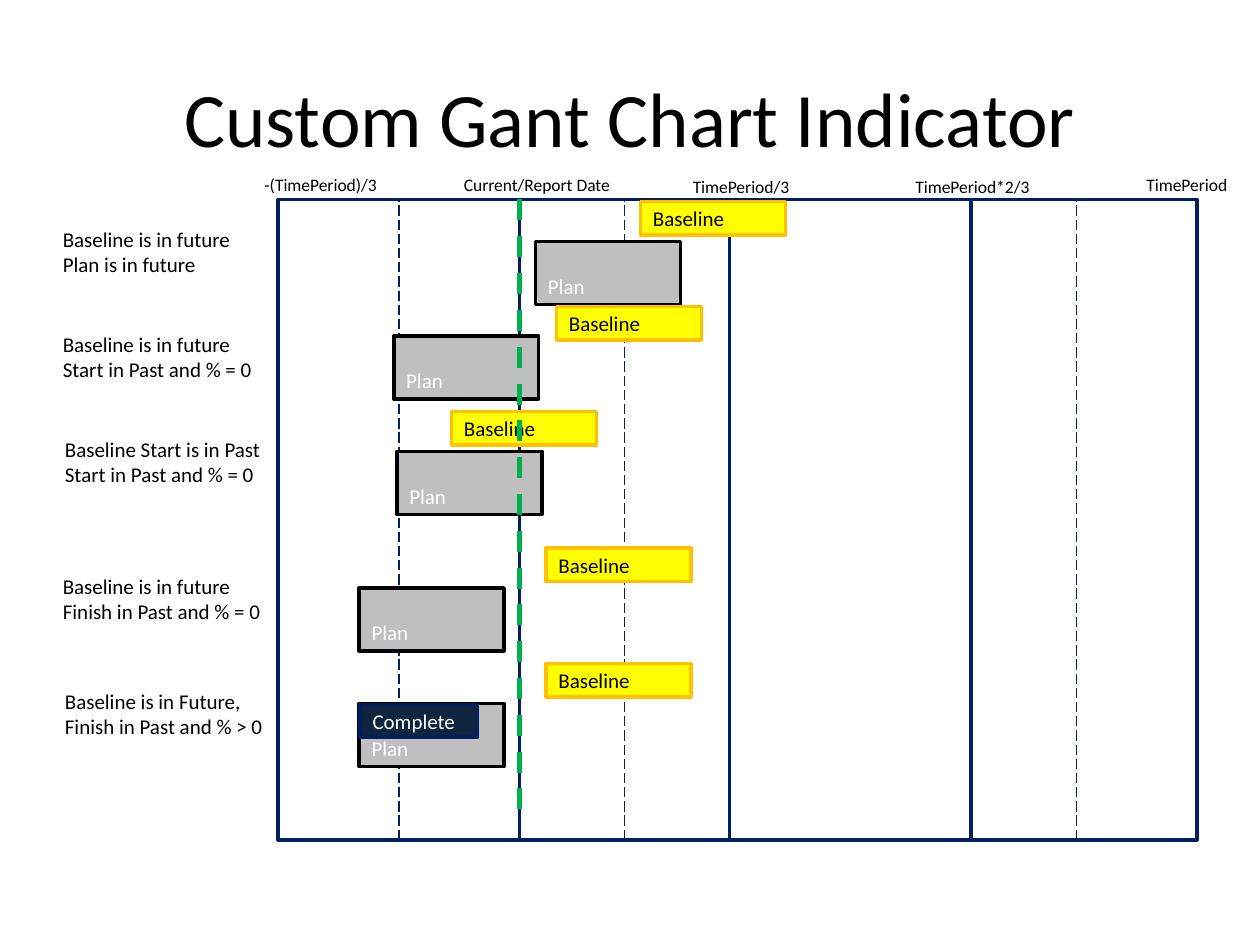
from dataclasses import dataclass

from lxml import etree
from pptx import Presentation
from pptx import util as u
from pptx.dml.color import RGBColor
from pptx.enum import dml, shapes, text
from pptx.oxml.ns import qn

COLUMNS, WIDTH, HEIGHT = 240, u.Inches(10), u.Inches(7.5)
CELL = WIDTH / COLUMNS
PANEL_TOP, PANEL_WIDTH, PANEL_HEIGHT = 38, 46, 122
FIRST_PANEL, PANEL_STEP = 53, 43
BAR_WIDTH, PLAN_HEIGHT, BASELINE_HEIGHT = 27.6, 12, 6.4


@dataclass(frozen=True)
class Theme:
    """Colours, font and type sizes of the slide."""
    font: str = "Calibri"
    ink: str = "000000"
    paper: str = "FFFFFF"
    navy: str = "002060"
    plan: str = "BFBFBF"
    baseline: str = "FFFF00"
    baseline_edge: str = "FFC000"
    complete: str = "0F243E"
    today: str = "00B050"
    title_size: int = 44
    label_size: int = 12
    axis_size: int = 10


THEME = Theme()

AXIS_LABELS = [
    ("-(TimePeriod)/3", 48, 32, 28),
    ("Current/Report Date", 86, 32, 34.6),
    ("TimePeriod", 216, 32, 24),
    ("TimePeriod/3", 129.6, 32.4, 24),
    ("TimePeriod*2/3", 172, 32.4, 28),
]

# label lines, label left, row top, plan left, plan offset, baseline left
CASES = [
    (["Baseline is in future Plan is in future"], 9.6, 42, 102, 4, 122),
    (["Baseline is in future Start in Past and % = 0"], 9.6, 62, 75, 2, 106),
    (["Baseline Start is in Past Start in Past and % = 0"], 10, 82, 75.6, 4, 86),
    (["Baseline is in future", "Finish in Past and % = 0"], 9.6, 108, 68.4, 4, 104),
    (["Baseline is in Future,", "Finish in Past and % > 0"], 10, 130, 68.4, 4, 104),
]


def grid(*cells):
    """Turn grid cells into slide lengths."""
    return [u.Emu(round(cell * CELL)) for cell in cells]


def write(shape, lines, size=THEME.label_size, color=THEME.ink,
          align=text.PP_ALIGN.LEFT, anchor=text.MSO_ANCHOR.MIDDLE):
    """Fill a shape with formatted paragraphs."""
    frame = shape.text_frame
    frame.word_wrap = True
    frame.vertical_anchor = anchor
    for index, line in enumerate(lines):
        paragraph = frame.add_paragraph() if index else frame.paragraphs[0]
        paragraph.alignment = align
        run = paragraph.add_run()
        run.text = line
        run.font.name = THEME.font
        run.font.size = u.Pt(size)
        run.font.color.rgb = RGBColor.from_string(color)


def add_box(slide, box, fill, edge):
    """Add an outlined rectangle."""
    shape = slide.shapes.add_shape(shapes.MSO_SHAPE.RECTANGLE, *grid(*box))
    shape.shadow.inherit = False
    shape.fill.solid()
    shape.fill.fore_color.rgb = RGBColor.from_string(fill)
    shape.line.color.rgb = RGBColor.from_string(edge)
    shape.line.width = u.Pt(2)
    return shape


def add_label(slide, lines, box, size):
    """Add a text box that grows with its text."""
    label = slide.shapes.add_textbox(*grid(*box))
    write(label, lines, size=size, anchor=text.MSO_ANCHOR.TOP)
    label.text_frame.auto_size = text.MSO_AUTO_SIZE.SHAPE_TO_FIT_TEXT


def add_line(slide, start, end, color, width, dash):
    """Add a dashed straight connector."""
    line = slide.shapes.add_connector(
        shapes.MSO_CONNECTOR.STRAIGHT, *grid(*start, *end))
    line.line.color.rgb = RGBColor.from_string(color)
    line.line.width = u.Pt(width)
    line.line.dash_style = dash
    etree.SubElement(line._element.spPr, qn("a:effectLst"))
    return line


def add_panel(slide, index, halved=True):
    """Add one time panel, with a dashed line at half its width."""
    left = FIRST_PANEL + index * PANEL_STEP
    panel = add_box(slide, (left, PANEL_TOP, PANEL_WIDTH, PANEL_HEIGHT),
                    THEME.paper, THEME.navy)
    if halved:
        middle = left + PANEL_WIDTH / 2
        line = add_line(slide, (middle, PANEL_TOP + PANEL_HEIGHT),
                        (middle, PANEL_TOP), THEME.navy, 0.75,
                        dml.MSO_LINE.LONG_DASH)
        line.begin_connect(panel, 2)
        line.end_connect(panel, 0)


def add_case(slide, lines, label_left, top, plan_left, plan_offset, baseline_left):
    """Add the label, plan bar and baseline bar of one case."""
    plan = add_box(slide, (plan_left, top + plan_offset, BAR_WIDTH, PLAN_HEIGHT),
                   THEME.plan, THEME.ink)
    write(plan, ["Plan"], color=THEME.paper, anchor=text.MSO_ANCHOR.BOTTOM)
    add_label(slide, lines, (label_left, top, 43, 12), THEME.label_size)
    baseline = add_box(slide, (baseline_left, top - 3.6, BAR_WIDTH, BASELINE_HEIGHT),
                       THEME.baseline, THEME.baseline_edge)
    write(baseline, ["Baseline"])


def add_title(slide, title):
    """Place and write the slide title."""
    shape = slide.shapes.title
    shape.left, shape.top, shape.width, shape.height = grid(12, 7.2, 216, 30)
    write(shape, [title], size=THEME.title_size, align=text.PP_ALIGN.CENTER)


def main():
    """Build and save the slide."""
    presentation = Presentation()
    presentation.slide_width, presentation.slide_height = WIDTH, HEIGHT
    slide = presentation.slides.add_slide(presentation.slide_layouts[5])
    for index in (3, 1, 0):
        add_panel(slide, index)
    add_panel(slide, 2, halved=False)
    add_title(slide, "Custom Gant Chart Indicator")
    for label, left, top, width in AXIS_LABELS:
        add_label(slide, [label], (left, top, width, 6.4), THEME.axis_size)
    for case in CASES:
        add_case(slide, *case)
    complete = add_box(slide, (68.6, 134.2, 22.4, 6.2), THEME.complete, THEME.navy)
    write(complete, ["Complete"], color=THEME.paper)
    add_line(slide, (99, PANEL_TOP), (99, 156), THEME.today, 3, dml.MSO_LINE.DASH)
    presentation.save("out.pptx")


if __name__ == "__main__":
    main()
